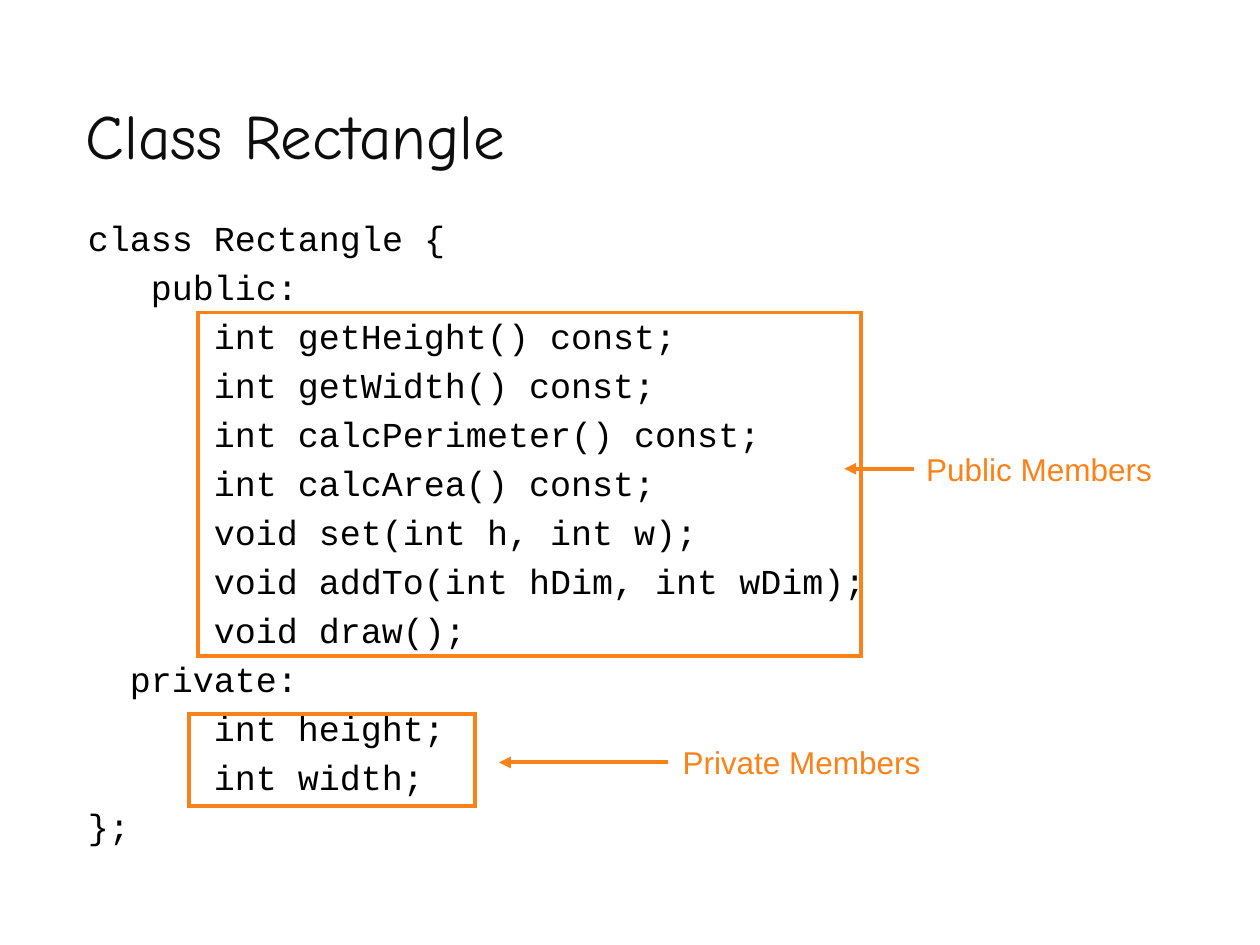
from dataclasses import dataclass

from lxml import etree
from pptx import Presentation
from pptx import util as u
from pptx.dml.color import RGBColor
from pptx.enum import shapes, text
from pptx.oxml import ns

INK = RGBColor(0x0D, 0x0D, 0x0D)
BLACK = RGBColor(0x00, 0x00, 0x00)
ORANGE = RGBColor(0xFA, 0x82, 0x18)
LINE_WIDTH = u.Pt(2.25)
CODE_SIZE = 20
CHAR_WIDTH = u.Pt(CODE_SIZE * 0.6)  # fixed-pitch advance
CODE_GAP = u.Pt(CODE_SIZE * 0.2)


@dataclass
class CodeLine:
    indent: int  # in characters
    code: str


@dataclass
class Callout:
    label: str
    box: tuple[float, float, float, float]  # left, top, width, height in cm
    label_left: float
    label_width: float
    arrow_from: float
    arrow_to: float
    arrow_y: float


CODE = [
    CodeLine(0, "class Rectangle {"),
    CodeLine(3, "public:"),
    CodeLine(6, "int getHeight() const;"),
    CodeLine(6, "int getWidth() const;"),
    CodeLine(6, "int calcPerimeter() const;"),
    CodeLine(6, "int calcArea() const;"),
    CodeLine(6, "void set(int h, int w);"),
    CodeLine(6, "void addTo(int hDim, int wDim);"),
    CodeLine(6, "void draw();"),
    CodeLine(2, "private:"),
    CodeLine(6, "int height;"),
    CodeLine(6, "int width;"),
    CodeLine(0, "};"),
]

CALLOUTS = [
    Callout("Private Members", (3.81, 14.4, 5.77, 1.85),
            13.51, 5.49, 13.46, 10.06, 15.37),
    Callout("Public Members", (3.99, 6.3, 13.36, 6.93),
            18.42, 8.05, 18.42, 17.02, 9.45),
]


def add_text(s, box: tuple, lines: list[str], font: str, size: float,
             color: RGBColor):
    """Add a wrapped text box with one paragraph per line."""
    tf = s.shapes.add_textbox(*map(u.Cm, box)).text_frame
    tf.word_wrap = True
    tf.text = "\n".join(lines)
    for p in tf.paragraphs:
        for r in p.runs:
            r.font.name = font
            r.font.size = u.Pt(size)
            r.font.color.rgb = color
    return tf


def add_code(s, lines: list[CodeLine]) -> None:
    tf = add_text(s, (1.52, 4.24, 23.03, 13.13), [c.code for c in lines],
                  "Courier New", CODE_SIZE, BLACK)
    tf.margin_right = 0
    for p, line in zip(tf.paragraphs, lines):
        p.space_before = CODE_GAP
        p_pr = p._p.get_or_add_pPr()
        p_pr.set("marL", str(line.indent * CHAR_WIDTH))
        p_pr.set("indent", "0")


def style_line(line, end_tag: str, **attributes: str) -> None:
    """Colour a line and add its join or arrowhead."""
    line.color.rgb = ORANGE
    line.width = LINE_WIDTH
    etree.SubElement(line._get_or_add_ln(), ns.qn(end_tag), **attributes)


def add_arrow(s, start: float, end: float, y: float) -> None:
    arrow = s.shapes.add_connector(shapes.MSO_CONNECTOR.STRAIGHT,
                                   *map(u.Cm, (start, y, end, y)))
    style_line(arrow.line, "a:tailEnd", type="triangle")
    etree.SubElement(arrow._element.spPr, ns.qn("a:effectLst"))


def add_callout(s, c: Callout) -> None:
    """Frame a block of code and point a label at it."""
    sp = s.shapes.add_shape(shapes.MSO_SHAPE.RECTANGLE, *map(u.Cm, c.box))
    sp.shadow.inherit = False
    sp.fill.background()
    style_line(sp.line, "a:miter", lim="800000")
    height = 1.02
    add_text(s, (c.label_left, c.arrow_y - height / 2, c.label_width, height),
             [c.label], "Arial", 18, ORANGE)
    add_arrow(s, c.arrow_from, c.arrow_to, c.arrow_y)


def main() -> None:
    prs = Presentation()
    prs.slide_width, prs.slide_height = u.Cm(25.4), u.Cm(19.05)
    s = prs.slides.add_slide(prs.slide_layouts[6])

    # Title
    tf = add_text(s, (1.48, 0.82, 23.06, 2.77), ["Class Rectangle"],
                  "Comic Neue", 36, INK)
    tf.vertical_anchor = text.MSO_ANCHOR.BOTTOM

    # Class declaration
    add_code(s, CODE)

    # Framed member groups
    for callout in CALLOUTS:
        add_callout(s, callout)

    prs.save("out.pptx")


if __name__ == "__main__":
    main()
